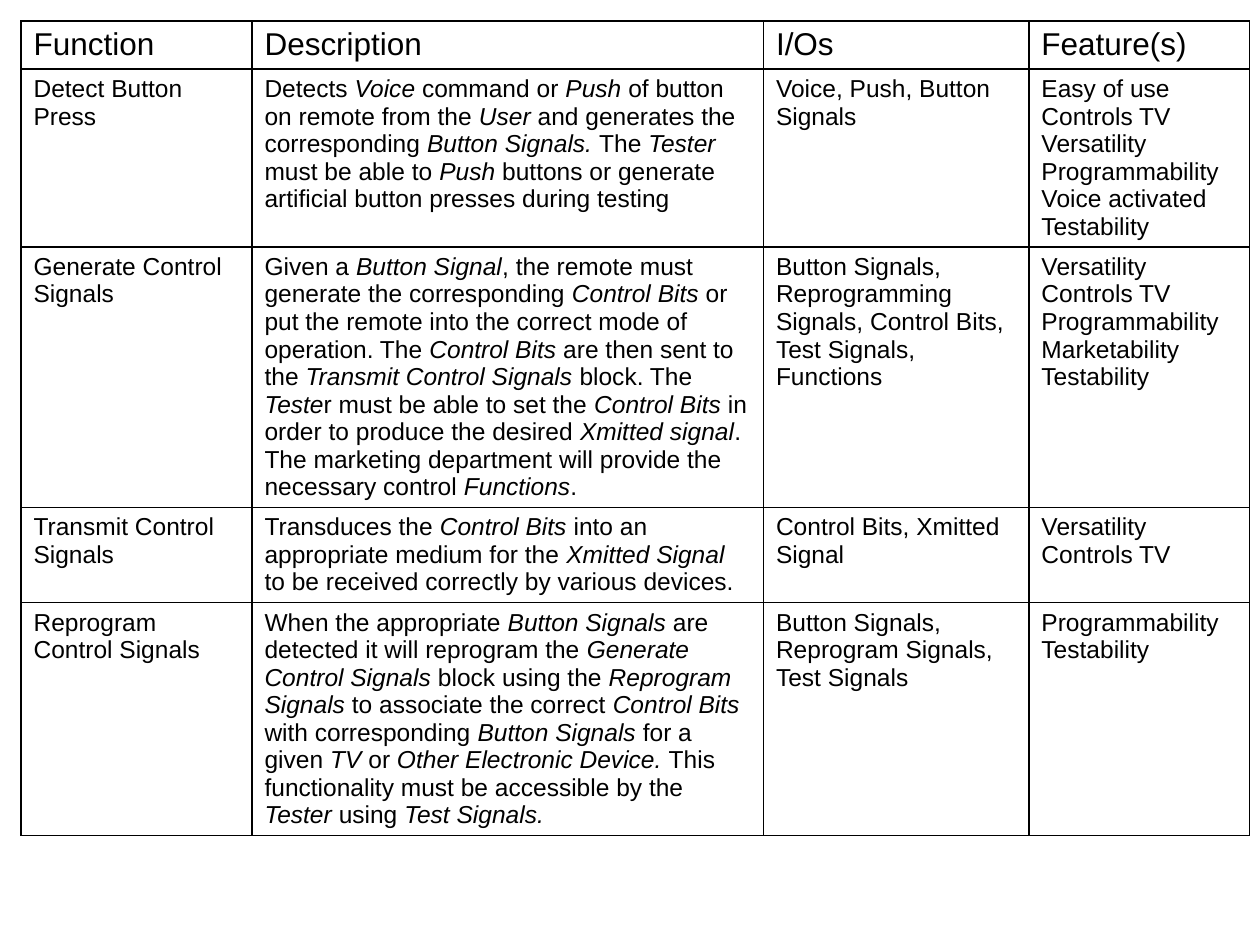
import pptx
import pptx.util
import pptx.dml.color
import pptx.oxml
import pptx.oxml.ns

Pt = pptx.util.Pt

# Content: asterisks enclose italic words, line breaks separate paragraphs
HEADINGS = ("Function", "Description", "I/Os", "Feature(s)")
FUNCTIONS = [
    ("Detect Button Press",
     "Detects *Voice* command or *Push* of button on remote from the *User* and generates "
     "the corresponding *Button Signals. *The *Tester *must be able to *Push* buttons or "
     "generate artificial button presses during testing",
     "Voice, Push, Button Signals",
     "Easy of use\nControls TV\nVersatility\nProgrammability\nVoice activated\nTestability"),
    ("Generate Control Signals",
     "Given a *Button Signal*, the remote must generate the corresponding *Control Bits *or "
     "put the remote into the correct mode of operation. The *Control Bits *are then sent to "
     "the *Transmit Control Signals *block. The *Teste*r must be able to set the "
     "*Control Bits* in order to produce the desired *Xmitted signal*. The marketing "
     "department will provide the necessary control *Functions*.",
     "Button Signals, Reprogramming Signals, Control Bits, Test Signals, Functions",
     "Versatility\nControls TV\nProgrammability\nMarketability\nTestability"),
    ("Transmit Control Signals",
     "Transduces the *Control Bits* into an appropriate medium for the *Xmitted Signal *to be "
     "received correctly by various devices.",
     "Control Bits, Xmitted Signal",
     "Versatility\nControls TV"),
    ("Reprogram Control Signals",
     "When the appropriate *Button Signals *are detected it will reprogram the *Generate "
     "Control Signals *block using the *Reprogram Signals* to associate the correct "
     "*Control Bits *with corresponding *Button Signals* for a given *TV *or* Other "
     "Electronic Device. *This functionality must be accessible by the *Tester *using "
     "*Test Signals.*",
     "Button Signals, Reprogram Signals, Test Signals",
     "Programmability\nTestability"),
]

# Layout in points
LEFT = TOP = 12
COLUMN_WIDTHS = (132, 292.3, 151.7, 126)
ROW_HEIGHTS = (27.4, 101.7, 148.6, 54.3, 133)
BLACK = "000000"


def color(value):
    return pptx.dml.color.RGBColor.from_string(value)


def write_text(frame, text, size=14, font="Arial", ink=BLACK):
    for index, line in enumerate(text.split("\n")):
        para = frame.paragraphs[0] if index == 0 else frame.add_paragraph()
        for part, words in enumerate(line.split("*")):
            if not words:
                continue
            span = para.add_run()
            span.text = words
            span.font.name = font
            span.font.size = Pt(size)
            span.font.bold = False
            span.font.italic = part % 2 == 1
            span.font.color.rgb = color(ink)


def add_borders(cell, width=1, ink=BLACK):
    properties = cell._tc.get_or_add_tcPr()
    for index, side in enumerate(("lnL", "lnR", "lnT", "lnB")):
        border = pptx.oxml.parse_xml(
            f'<a:{side} {pptx.oxml.ns.nsdecls("a")} w="{Pt(width)}">'
            f'<a:solidFill><a:srgbClr val="{ink}"/></a:solidFill></a:{side}>')
        properties.insert(index, border)


deck = pptx.Presentation()
deck.slide_width, deck.slide_height = Pt(720), Pt(540)
page = deck.slides.add_slide(deck.slide_layouts[6])

# Table grid
rows = [HEADINGS] + FUNCTIONS
table = page.shapes.add_table(
    len(rows), len(HEADINGS), Pt(LEFT), Pt(TOP),
    Pt(sum(COLUMN_WIDTHS)), Pt(sum(ROW_HEIGHTS))).table
table.first_row = table.horz_banding = False
for column, width in zip(table.columns, COLUMN_WIDTHS):
    column.width = Pt(width)
for row, height in zip(table.rows, ROW_HEIGHTS):
    row.height = Pt(height)

# Cell text, fill and borders
for row_index, texts in enumerate(rows):
    for column_index, text in enumerate(texts):
        cell = table.cell(row_index, column_index)
        write_text(cell.text_frame, text, size=18 if row_index == 0 else 14)
        cell.fill.background()
        add_borders(cell)

deck.save("out.pptx")
